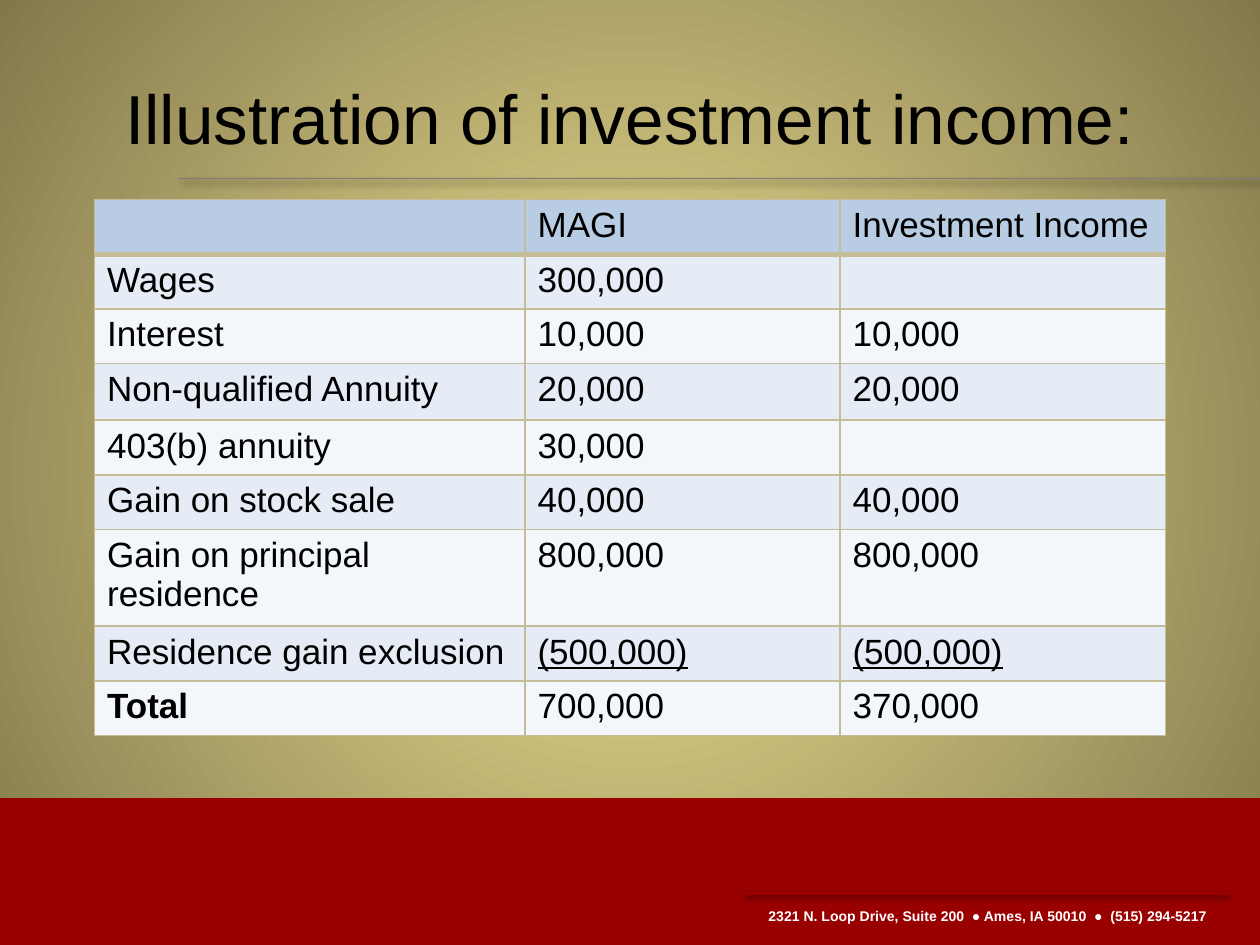
from lxml.etree import SubElement
from pptx import Presentation
from pptx.dml.color import RGBColor
from pptx.enum.shapes import MSO_CONNECTOR, MSO_SHAPE
from pptx.enum.text import MSO_ANCHOR, MSO_AUTO_SIZE, PP_ALIGN
from pptx.oxml import parse_xml
from pptx.oxml.ns import nsdecls, qn
from pptx.util import Pt

BLACK = RGBColor(0x00, 0x00, 0x00)
WHITE = RGBColor(0xFF, 0xFF, 0xFF)
RED = RGBColor(0x99, 0x00, 0x00)
GREY = RGBColor(0x7C, 0x7C, 0x7C)
GOLD = RGBColor(0xF1, 0xE1, 0x93)
OLIVE = RGBColor(0x81, 0x79, 0x4C)
TAN = RGBColor(0xC4, 0xBD, 0x97)
HEADER_BLUE = RGBColor(0xB8, 0xCC, 0xE4)
ROW_FILLS = (RGBColor(0xE6, 0xEC, 0xF5), RGBColor(0xF3, 0xF6, 0xFA))

INCOME_ROWS = [
    ("", "MAGI", "Investment Income"),
    ("Wages", "300,000", ""),
    ("Interest", "10,000", "10,000"),
    ("Non-qualified Annuity", "20,000", "20,000"),
    ("403(b) annuity", "30,000", ""),
    ("Gain on stock sale", "40,000", "40,000"),
    ("Gain on principal residence", "800,000", "800,000"),
    ("Residence gain exclusion", "(500,000)", "(500,000)"),
    ("Total", "700,000", "370,000"),
]
COLUMN_WIDTHS = (246, 180, 186)
ROW_HEIGHTS = (31, 31, 31, 32.4, 31, 31, 31, 31, 31)


class SlideBuilder:
    def __init__(self, page, font="Arial"):
        self.page = page
        self.font = font

    def style(self, para, size, color, bold=False, underline=False):
        for span in para.runs:
            span.font.name = self.font
            span.font.size = Pt(size)
            span.font.bold = bold
            span.font.underline = underline
            span.font.color.rgb = color

    def background(self, center, edge):
        """Fill the page with a gradient that spreads in circles."""
        fill = self.page.background.fill
        fill.gradient()
        for stop, color in zip(fill.gradient_stops, (center, edge)):
            stop.color.rgb = color
        gradient = self.page.background._cSld.find(".//" + qn("a:gradFill"))
        gradient.replace(gradient.find(qn("a:lin")), parse_xml(
            f'<a:path {nsdecls("a")} path="circle">'
            '<a:fillToRect l="50000" t="50000" r="50000" b="50000"/></a:path>'))

    def title(self, text, left, top, width, height, size):
        box = self.page.shapes.title
        box.left, box.top, box.width, box.height = map(Pt, (left, top, width, height))
        frame = box.text_frame
        frame.text = text
        frame.auto_size = MSO_AUTO_SIZE.NONE
        frame.vertical_anchor = MSO_ANCHOR.MIDDLE
        frame.paragraphs[0].alignment = PP_ALIGN.CENTER
        self.style(frame.paragraphs[0], size, BLACK)

    def band(self, left, top, width, height, color):
        box = self.page.shapes.add_shape(
            MSO_SHAPE.RECTANGLE, Pt(left), Pt(top), Pt(width), Pt(height))
        box.shadow.inherit = False
        box.fill.solid()
        box.fill.fore_color.rgb = color
        box.line.fill.background()

    def rule(self, left, right, top, color, weight, opacity, blur, distance, angle):
        """Draw a horizontal line with a soft black shadow."""
        line = self.page.shapes.add_connector(
            MSO_CONNECTOR.STRAIGHT, Pt(left), Pt(top), Pt(right), Pt(top))
        line.line.color.rgb = color
        line.line.width = Pt(weight)
        line._element.spPr.append(parse_xml(
            f'<a:effectLst {nsdecls("a")}><a:outerShdw blurRad="{Pt(blur)}" '
            f'dist="{Pt(distance)}" dir="{angle * 60000}" rotWithShape="0">'
            f'<a:srgbClr val="{BLACK}"><a:alpha val="{opacity * 1000}"/></a:srgbClr>'
            '</a:outerShdw></a:effectLst>'))

    def label(self, text, left, top, width, height, size, color):
        box = self.page.shapes.add_textbox(Pt(left), Pt(top), Pt(width), Pt(height))
        frame = box.text_frame
        frame.text = text
        frame.word_wrap = False
        frame.auto_size = MSO_AUTO_SIZE.SHAPE_TO_FIT_TEXT
        self.style(frame.paragraphs[0], size, color, bold=True)

    def borders(self, cell, color, bottom):
        properties = cell._tc.get_or_add_tcPr()
        for side, weight in (("L", 1), ("R", 1), ("T", 1), ("B", bottom)):
            line = SubElement(properties, qn(f"a:ln{side}"), w=str(Pt(weight)))
            fill = SubElement(line, qn("a:solidFill"))
            SubElement(fill, qn("a:srgbClr"), val=str(color))

    def table(self, rows, widths, heights, left, top, size):
        table = self.page.shapes.add_table(
            len(rows), len(widths), Pt(left), Pt(top),
            Pt(sum(widths)), Pt(sum(heights))).table
        for column, width in zip(table.columns, widths):
            column.width = Pt(width)
        for i, (values, height) in enumerate(zip(rows, heights)):
            table.rows[i].height = Pt(height)
            for j, value in enumerate(values):
                cell = table.cell(i, j)
                self.borders(cell, TAN, bottom=1 if i else 3)
                cell.fill.solid()
                cell.fill.fore_color.rgb = ROW_FILLS[(i - 1) % 2] if i else HEADER_BLUE
                cell.text_frame.text = value
                self.style(cell.text_frame.paragraphs[0], size, BLACK,
                           bold=value == "Total", underline=value.startswith("("))


def main():
    deck = Presentation()
    deck.slide_width, deck.slide_height = Pt(720), Pt(540)
    slide = SlideBuilder(deck.slides.add_slide(deck.slide_layouts[5]))
    slide.background(GOLD, OLIVE)
    slide.band(0, 456, 720, 84, RED)
    slide.rule(102, 720, 102, GREY, 1, opacity=40, blur=4, distance=3, angle=45)
    slide.label("2321 N. Loop Drive, Suite 200  ● Ames, IA 50010  ●  (515) 294-5217",
                432, 514.8, 279.4, 17, 8, WHITE)
    slide.rule(426, 702, 510.5, RED, 2, opacity=38, blur=3.1, distance=1.6, angle=90)
    slide.title("Illustration of investment income:", 36, 21.6, 648, 90, 39.6)
    slide.table(INCOME_ROWS, COLUMN_WIDTHS, ROW_HEIGHTS, 54, 114, 20)
    deck.save("out.pptx")


if __name__ == "__main__":
    main()
